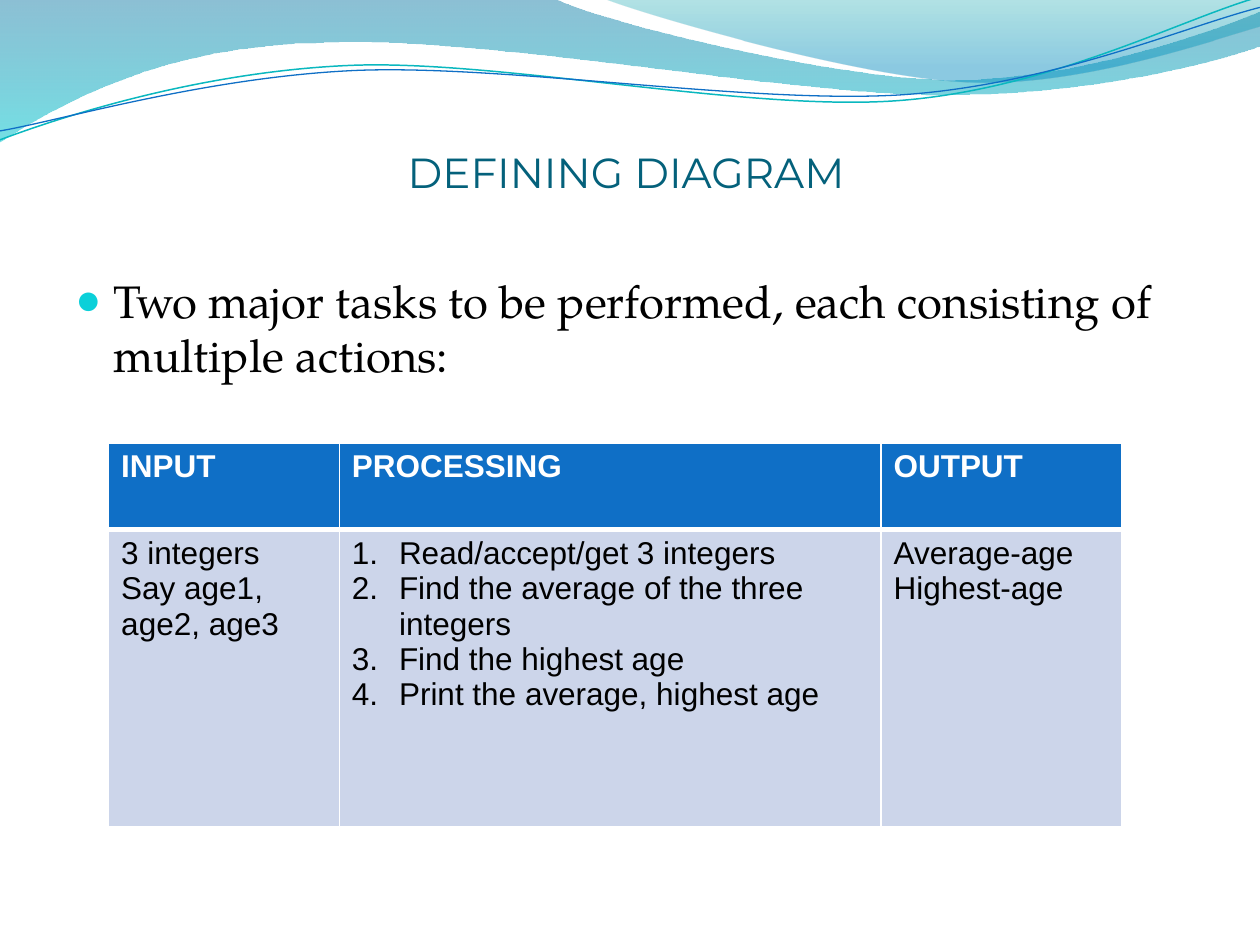
"""Build the "Defining diagram" slide with its wave header and task table."""
from dataclasses import dataclass

from lxml.etree import SubElement
from pptx import Presentation
from pptx.dml.color import RGBColor
from pptx.enum.text import MSO_ANCHOR, MSO_AUTO_SIZE, PP_ALIGN
from pptx.oxml.ns import qn
from pptx.shapes.autoshape import Shape
from pptx.slide import Slide
from pptx.table import _Cell
from pptx.text.text import TextFrame, _Paragraph
from pptx.util import Cm, Pt

COLORS = {
    "title": "04617B",
    "text": "000000",
    "white": "FFFFFF",
    "bullet": "0BD0D9",
    "header": "0F6FC6",
    "body": "CCD5EA",
    "teal_line": "0AB8BF",
    "blue_line": "0F6FC6",
    "deep_blue": "0074A1",
    "aqua": "00C6CF",
    "sea_green": "00A1A9",
    "sky_blue": "008BBF",
}
Point = tuple[float, float]


@dataclass(frozen=True)
class GradientStop:
    """A gradient colour with its position and opacity in percent."""
    position: int
    color: str
    opacity: int


@dataclass(frozen=True)
class Wave:
    """An outline in cm: one-point segments are straight, three-point ones are curves."""
    start: Point
    segments: tuple[tuple[Point, ...], ...]
    stops: tuple[GradientStop, ...] = ()
    line_color: str = ""
    line_width: float = 0


@dataclass(frozen=True)
class Column:
    """A table column with its heading and entries."""
    width: float
    heading: str
    entries: tuple[str, ...]
    numbered: bool = False


WAVES = (
    Wave((0, -0.03), (
        ((11.18, -0.03),),
        ((12.09, 0.43), (16.87, 1.6), (19.25, 1.6)),
        ((21.67, 1.6), (24.33, 0.66), (25.4, 0.23)),
        ((25.43, 0.91),),
        ((24.97, 1.12), (22.1, 1.93), (18.95, 1.91)),
        ((15.8, 1.91), (9.7, 0.71), (6.53, 0.86)),
        ((3.28, 0.89), (1.17, 2.11), (-0.03, 2.87)),
    ), stops=(GradientStop(0, "deep_blue", 45), GradientStop(100, "aqua", 55))),
    Wave((12.17, -0.03), (
        ((12.93, 0.28), (17.32, 1.57), (19.53, 1.65)),
        ((21.74, 1.75), (24.41, 0.81), (25.4, 0.53)),
        ((25.4, 0),),
    ), stops=(GradientStop(0, "sea_green", 30), GradientStop(80, "sky_blue", 45))),
    Wave((0, 2.82), (
        ((1.22, 2.36), (4.01, 1.45), (7.04, 1.32)),
        ((10.03, 1.19), (15.06, 2.26), (18.11, 2.03)),
        ((21.16, 1.8), (23.83, 0.38), (25.35, -0.05)),
    ), line_color="teal_line", line_width=0.85),
    Wave((0, 2.64), (
        ((1.19, 2.44), (4.17, 1.55), (7.19, 1.42)),
        ((10.24, 1.3), (15.16, 2.11), (18.21, 1.91)),
        ((21.23, 1.7), (23.9, 0.53), (25.4, 0.15)),
    ), line_color="blue_line", line_width=0.75),
)

COLUMNS = (
    Column(4.65, "INPUT", ("3 integers", "Say age1, age2, age3")),
    Column(10.92, "PROCESSING", (
        "Read/accept/get 3 integers",
        "Find the average of the three integers",
        "Find the highest age",
        "Print the average, highest age",
    ), numbered=True),
    Column(4.85, "OUTPUT", ("Average-age", "Highest-age")),
)


def rgb(name: str) -> RGBColor:
    """Return a named colour."""
    return RGBColor.from_string(COLORS[name])


def bend_segments(shape: Shape, segments: tuple[tuple[Point, ...], ...]) -> None:
    """Turn the straight sides of a freeform into Bézier curves where controls are given."""
    sides = list(shape._element.iter(qn("a:lnTo")))
    for side, (*controls, _) in zip(sides, segments):
        if not controls:
            continue
        side.tag = qn("a:cubicBezTo")
        end = side[0]
        for x, y in controls:
            control = SubElement(side, qn("a:pt"), x=str(Cm(x) - shape.left),
                                 y=str(Cm(y) - shape.top))
            end.addprevious(control)


def fill_gradient(shape: Shape, stops: tuple[GradientStop, ...]) -> None:
    """Fill a shape with a translucent gradient from top to bottom."""
    shape.fill.gradient()
    shape.fill.gradient_angle = 270
    for target, stop in zip(shape.fill.gradient_stops, stops):
        target.position = stop.position / 100
        target.color.rgb = rgb(stop.color)
    for color, stop in zip(shape._element.spPr.iter(qn("a:srgbClr")), stops):
        SubElement(color, qn("a:alpha"), val=str(stop.opacity * 1000))


def draw_wave(slide: Slide, wave: Wave) -> None:
    """Draw a filled wave or an open wave line."""
    ends = [(Cm(x), Cm(y)) for *_, (x, y) in wave.segments]
    builder = slide.shapes.build_freeform(*(Cm(value) for value in wave.start))
    builder.add_line_segments(ends, close=bool(wave.stops))
    shape = builder.convert_to_shape()
    bend_segments(shape, wave.segments)
    shape.shadow.inherit = False
    if wave.stops:
        fill_gradient(shape, wave.stops)
        shape.line.fill.background()
    else:
        shape.fill.background()
        shape.line.color.rgb = rgb(wave.line_color)
        shape.line.width = Pt(wave.line_width)


def set_bullet(paragraph: _Paragraph, indent: float, character: str = "") -> None:
    """Give a paragraph a coloured bullet, or a number when no character is given."""
    properties = paragraph._p.get_or_add_pPr()
    properties.set("marL", str(Cm(indent)))
    properties.set("indent", str(-Cm(indent)))
    if character:
        color = SubElement(properties, qn("a:buClr"))
        SubElement(color, qn("a:srgbClr"), val=COLORS["bullet"])
        SubElement(properties, qn("a:buSzPct"), val="95000")
        SubElement(properties, qn("a:buFont"), typeface="Arial")
        SubElement(properties, qn("a:buChar"), char=character)
    else:
        SubElement(properties, qn("a:buFont"), typeface="+mj-lt")
        SubElement(properties, qn("a:buAutoNum"), type="arabicPeriod")


def write_text(frame: TextFrame, *lines: str, font: str = "Arial", size: float = 18,
               color: str = "text", bold: bool = False,
               align: PP_ALIGN = PP_ALIGN.LEFT) -> None:
    """Write one formatted paragraph per line."""
    frame.word_wrap = True
    for index, line in enumerate(lines):
        paragraph = frame.add_paragraph() if index else frame.paragraphs[0]
        paragraph.alignment = align
        run = paragraph.add_run()
        run.text = line
        run.font.name, run.font.size, run.font.bold = font, Pt(size), bold
        run.font.color.rgb = rgb(color)


def style_cell(cell: _Cell, fill: str, bottom_width: float) -> None:
    """Give a cell white borders and a solid fill."""
    properties = cell._tc.get_or_add_tcPr()
    for side in ("lnL", "lnR", "lnT", "lnB"):
        width = bottom_width if side == "lnB" else 1
        line = SubElement(properties, qn(f"a:{side}"), w=str(Pt(width)))
        solid = SubElement(line, qn("a:solidFill"))
        SubElement(solid, qn("a:srgbClr"), val=COLORS["white"])
    cell.fill.solid()
    cell.fill.fore_color.rgb = rgb(fill)


def draw_table(slide: Slide) -> None:
    """Draw the input, processing and output table."""
    width = sum(column.width for column in COLUMNS)
    table = slide.shapes.add_table(
        2, len(COLUMNS), Cm(2.19), Cm(8.93), Cm(width), Cm(7.74)).table
    table.rows[0].height, table.rows[1].height = Cm(1.75), Cm(5.99)
    for index, column in enumerate(COLUMNS):
        table.columns[index].width = Cm(column.width)
        header, body = table.cell(0, index), table.cell(1, index)
        style_cell(header, "header", 3)
        style_cell(body, "body", 1)
        write_text(header.text_frame, column.heading, color="white", bold=True)
        write_text(body.text_frame, *column.entries)
        for paragraph in body.text_frame.paragraphs if column.numbered else ():
            set_bullet(paragraph, 0.95)


def main() -> None:
    """Build and save the presentation."""
    presentation = Presentation()
    presentation.slide_width, presentation.slide_height = Cm(25.4), Cm(19.05)
    slide = presentation.slides.add_slide(presentation.slide_layouts[5])
    for wave in WAVES:
        draw_wave(slide, wave)
    title = slide.shapes.title
    title.left, title.top, title.width, title.height = Cm(1.19), Cm(1.98), Cm(22.86), Cm(1.98)
    frame = title.text_frame
    frame.auto_size = MSO_AUTO_SIZE.NONE
    frame.vertical_anchor = MSO_ANCHOR.BOTTOM
    frame.margin_left = frame.margin_right = frame.margin_bottom = 0
    write_text(frame, "DEFINING DIAGRAM", font="Montserrat", size=24, color="title",
               align=PP_ALIGN.CENTER)
    body = slide.shapes.add_textbox(Cm(1.27), Cm(5.37), Cm(22.86), Cm(12.19)).text_frame
    write_text(body, "Two major tasks to be performed, each consisting of multiple actions:",
               font="TeX Gyre Pagella", size=26)
    body.paragraphs[0].space_before = Pt(5.2)
    set_bullet(body.paragraphs[0], 0.76, "●")
    draw_table(slide)
    presentation.save("out.pptx")


if __name__ == "__main__":
    main()
